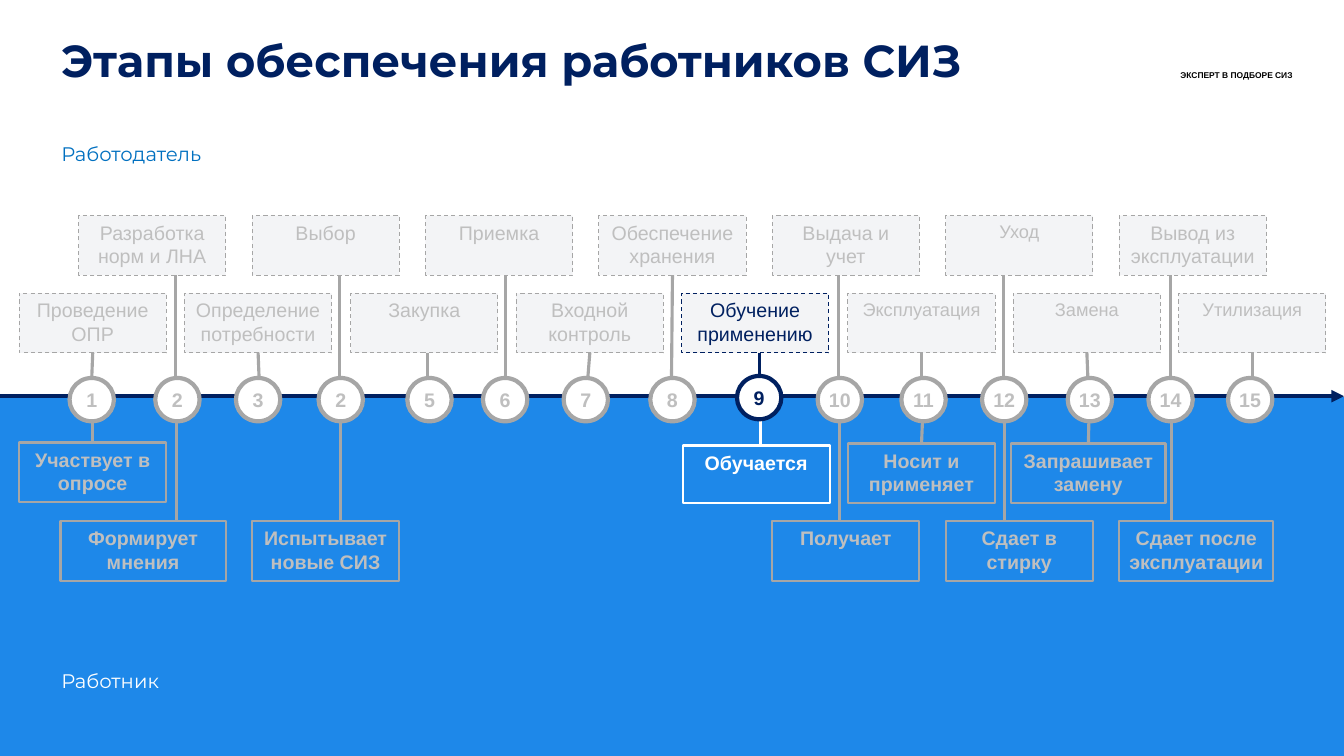
from dataclasses import dataclass

import pptx
import pptx.dml.color
import pptx.enum.dml
import pptx.enum.shapes
import pptx.enum.text
import pptx.oxml
import pptx.oxml.ns
import pptx.util

PX = 9144  # EMU in one px, 100 px to the inch
WIDE, HIGH = 1333, 750
BOX_W, BOX_H = 146, 59
HUB_W, HUB_H = 44, 43
AXIS_Y = 393

COLOR = {
    "navy": "002060",
    "blue": "0070C0",
    "band": "1E88E9",
    "pale": "F3F4F6",
    "gray": "A6A6A6",
    "mute": "BFBFBF",
    "white": "FFFFFF",
    "black": "000000",
}
ALIGN = pptx.enum.text.PP_ALIGN
ANCHOR = pptx.enum.text.MSO_ANCHOR
KIND = pptx.enum.shapes.MSO_SHAPE


@dataclass
class Duty:
    """What the worker does at a step."""
    text: str
    left: int
    top: int
    wide: int = BOX_W
    high: int = BOX_H


@dataclass
class Step:
    num: str
    hub: int   # left edge of the circle
    stem: int  # x of the vertical lines
    text: str
    size: int = 14
    duty: Duty | None = None
    live: bool = False


STEPS = [
    Step("1", 69, 91, "Проведение ОПР", duty=Duty("Участвует в опросе", 19, 439)),
    Step("2", 154, 174, "Разработка норм и ЛНА", duty=Duty("Формирует мнения", 60, 517, 164)),
    Step("3", 234, 257, "Определение потребности"),
    Step("2", 316, 337, "Выбор", duty=Duty("Испытывает новые СИЗ", 250, 517)),
    Step("5", 404, 424, "Закупка"),
    Step("6", 479, 501, "Приемка"),
    Step("7", 559, 583, "Входной контроль"),
    Step("8", 645, 666, "Обеспечение хранения"),
    Step("9", 731, 753, "Обучение применению", duty=Duty("Обучается", 677, 442, high=57), live=True),
    Step("10", 811, 832, "Выдача и учет", duty=Duty("Получает", 766, 517)),
    Step("11", 894, 914, "Эксплуатация", 13, Duty("Носит и применяет", 841, 440)),
    Step("12", 974, 995, "Уход", 13, Duty("Сдает в стирку", 938, 517)),
    Step("13", 1059, 1079, "Замена", 13, Duty("Запрашивает замену", 1003, 440, 153)),
    Step("14", 1139, 1161, "Вывод из эксплуатации", duty=Duty("Сдает после эксплуатации", 1110, 517, 153)),
    Step("15", 1218, 1242, "Утилизация", 13),
]


def px(val: int) -> pptx.util.Emu:
    return pptx.util.Emu(val * PX)


def rgb(name: str) -> pptx.dml.color.RGBColor:
    return pptx.dml.color.RGBColor.from_string(COLOR[name])


def write(shape, text: str, size: int, color: str, bold: bool = False,
          font: str = "Arial", align=ALIGN.LEFT, anchor=ANCHOR.TOP, wrap: bool = True) -> None:
    frame = shape.text_frame
    frame.text = text
    frame.word_wrap = wrap
    frame.vertical_anchor = anchor
    para = frame.paragraphs[0]
    para.alignment = align
    face = para.runs[0].font
    face.name, face.size, face.bold = font, pptx.util.Pt(size), bold
    face.color.rgb = rgb(color)


def label(slide, area: tuple[int, int, int, int], text: str, size: int, color: str, **look) -> None:
    write(slide.shapes.add_textbox(*map(px, area)), text, size, color, **look)


def shape(slide, kind, area: tuple[int, int, int, int], fill: str | None,
          line: str | None = None, width: float = 1, dash: bool = False):
    item = slide.shapes.add_shape(kind, *map(px, area))
    item.shadow.inherit = False
    if fill:
        item.fill.solid()
        item.fill.fore_color.rgb = rgb(fill)
    else:
        item.fill.background()
    if line:
        item.line.color.rgb = rgb(line)
        item.line.width = pptx.util.Pt(width)
    else:
        item.line.fill.background()
    if dash:
        item.line.dash_style = pptx.enum.dml.MSO_LINE.DASH
    return item


def draw_line(slide, start: tuple[int, int], end: tuple[int, int], color: str, width: float):
    line = slide.shapes.add_connector(
        pptx.enum.shapes.MSO_CONNECTOR.STRAIGHT, *map(px, start + end))
    line.line.color.rgb = rgb(color)
    line.line.width = pptx.util.Pt(width)
    pptx.oxml.ns.qn("a:effectLst")
    line._element.spPr.append(pptx.oxml.parse_xml(
        f"<a:effectLst {pptx.oxml.ns.nsdecls('a')}/>"))
    return line


def draw_stem(slide, box, side: int, x: int, end: int, color: str) -> None:
    """Line from a box to its circle, joined where it meets the middle of the side."""
    edge = box.top + (box.height if side == 2 else 0)
    line = draw_line(slide, (x, edge // PX), (x, end), color, 2.25)
    if abs(box.left + box.width // 2 - px(x)) <= px(2):
        line.begin_connect(box, side)


def draw_step(slide, rank: int, step: Step) -> None:
    hub_y = 373 if step.live else 375
    tone = "navy" if step.live else "gray"
    ink = "navy" if step.live else "mute"

    # Employer box: two staggered rows
    if rank % 2:
        left, top = 78 + 172 * (rank // 2), 214
    else:
        left, top = 19 + round(164.3 * (rank // 2)), 291
    box = shape(slide, KIND.RECTANGLE, (left, top, BOX_W, BOX_H), "pale", tone, 0.75, True)
    write(box, step.text, step.size, ink, align=ALIGN.CENTER)
    draw_stem(slide, box, 2, step.stem, hub_y, tone)

    # Worker box
    if step.duty:
        duty = step.duty
        edge = "white" if step.live else "gray"
        box = shape(slide, KIND.RECTANGLE, (duty.left, duty.top, duty.wide, duty.high), None, edge, 1.5)
        write(box, duty.text, 14, "white" if step.live else "mute", True, align=ALIGN.CENTER)
        draw_stem(slide, box, 0, step.stem + 1, hub_y + HUB_H - 2, edge)

    # Numbered circle
    hub = shape(slide, KIND.OVAL, (step.hub, hub_y, HUB_W, HUB_H), "white", tone, 3)
    write(hub, step.num, 14, ink, True, align=ALIGN.CENTER, anchor=ANCHOR.MIDDLE, wrap=False)
    frame = hub.text_frame
    frame.margin_left = frame.margin_right = frame.margin_top = frame.margin_bottom = 0


def main() -> None:
    deck = pptx.Presentation()
    deck.slide_width, deck.slide_height = px(WIDE), px(HIGH)
    slide = deck.slides.add_slide(deck.slide_layouts[5])

    # Title and tagline
    title = slide.shapes.title
    title.left, title.top, title.width, title.height = map(px, (51, 27, 1153, 141))
    write(title, "Этапы обеспечения работников СИЗ", 32, "navy", True, "Montserrat")
    title.text_frame.auto_size = pptx.enum.text.MSO_AUTO_SIZE.NONE
    title.text_frame.paragraphs[0].line_spacing = pptx.util.Pt(39)
    label(slide, (1161, 65, 145, 20), "ЭКСПЕРТ В ПОДБОРЕ СИЗ", 6, "black", bold=True)

    # Worker half and the names of both sides
    shape(slide, KIND.RECTANGLE, (0, 394, WIDE, HIGH - 394), "band")
    label(slide, (51, 136, 173, 34), "Работодатель", 14, "blue", font="Montserrat", wrap=False)
    label(slide, (51, 659, 124, 34), "Работник", 14, "white", font="Montserrat", wrap=False)

    # Time axis
    axis = draw_line(slide, (0, AXIS_Y), (WIDE, AXIS_Y), "navy", 3)
    axis.line._get_or_add_ln().append(pptx.oxml.parse_xml(
        f"<a:tailEnd {pptx.oxml.ns.nsdecls('a')} type='triangle'/>"))

    # Steps
    for rank, step in enumerate(STEPS):
        draw_step(slide, rank, step)

    deck.save("out.pptx")


if __name__ == "__main__":
    main()
